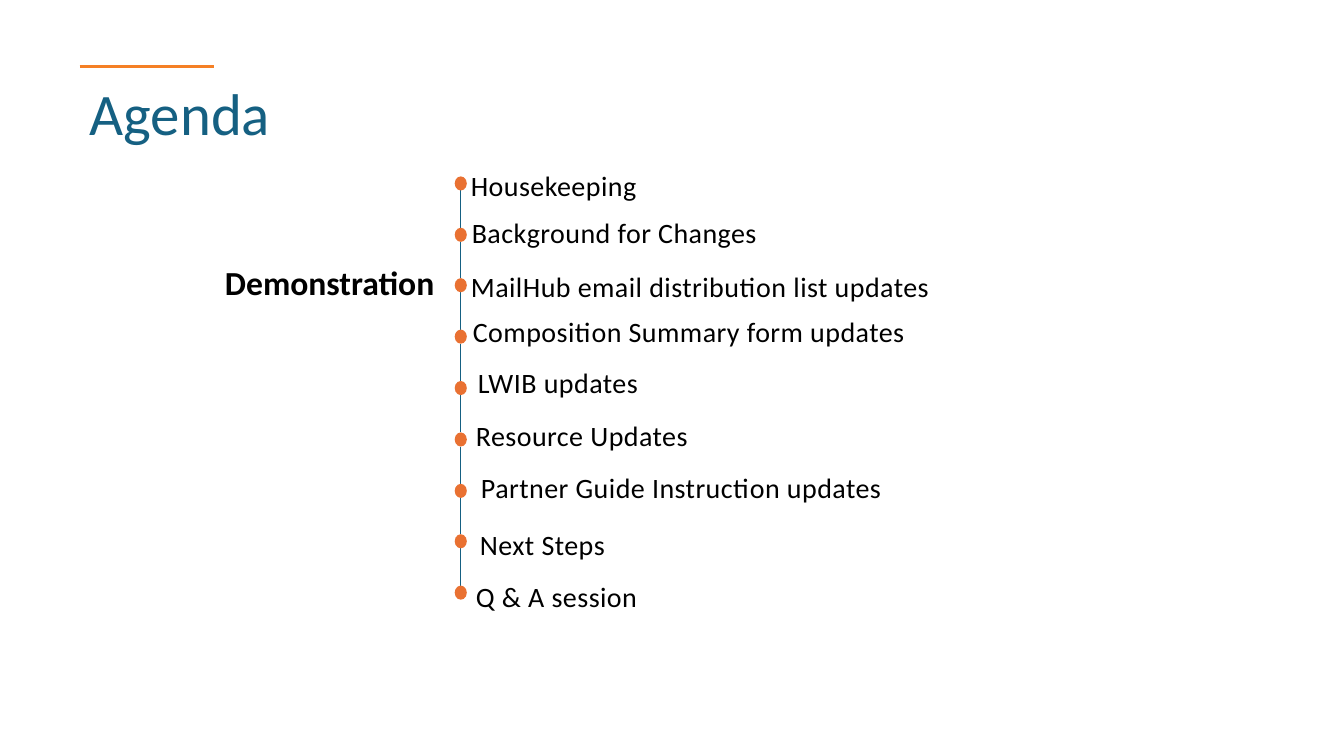
from dataclasses import dataclass

from lxml import etree
from pptx import Presentation
from pptx import util as u
from pptx.dml.color import RGBColor
from pptx.enum import shapes, text
from pptx.oxml.ns import qn

EMU_PER_PX = 9144  # 100 px to the inch


def px(length):
    return u.Emu(length * EMU_PER_PX)


@dataclass(frozen=True)
class Theme:
    font: str = "Calibri"
    ink: str = "000000"
    teal: str = "156082"
    dot: str = "E97132"
    accent: str = "F58025"
    title_size: int = 42
    label_size: int = 24
    item_size: int = 20
    item_spacing: int = 30  # hundredths of a point


class AgendaSlide:
    def __init__(self, deck, theme):
        self.theme = theme
        self.page = deck.slides.add_slide(deck.slide_layouts[5])

    def style(self, para, size, color, bold=False, align=text.PP_ALIGN.LEFT):
        para.alignment = align
        font = para.font
        font.name, font.size, font.bold = self.theme.font, u.Pt(size), bold
        font.color.rgb = RGBColor.from_string(color)

    def title(self, wording, left, top, width, height):
        box = self.page.shapes.title
        box.left, box.top, box.width, box.height = map(px, (left, top, width, height))
        frame = box.text_frame
        frame.text = wording
        frame.vertical_anchor = text.MSO_ANCHOR.TOP
        frame.auto_size = text.MSO_AUTO_SIZE.SHAPE_TO_FIT_TEXT
        self.style(frame.paragraphs[0], self.theme.title_size, self.theme.teal)

    def text(self, wording, left, top, width, height, size, spacing=0, **look):
        box = self.page.shapes.add_textbox(*map(px, (left, top, width, height)))
        frame = box.text_frame
        frame.word_wrap = True
        frame.auto_size = text.MSO_AUTO_SIZE.SHAPE_TO_FIT_TEXT
        frame.margin_left = frame.margin_right = 0
        frame.margin_top = frame.margin_bottom = 0
        para = frame.paragraphs[0]
        span = para.add_run()
        span.text = wording
        if spacing:
            span._r.get_or_add_rPr().set("spc", str(spacing))
        self.style(para, size, self.theme.ink, **look)

    def dot(self, left, top, width, height):
        oval = self.page.shapes.add_shape(
            shapes.MSO_SHAPE.OVAL, *map(px, (left, top, width, height)))
        oval.shadow.inherit = False
        oval.fill.solid()
        oval.fill.fore_color.rgb = RGBColor.from_string(self.theme.dot)
        oval.line.fill.background()

    def line(self, x1, y1, x2, y2, color, weight):
        rule = self.page.shapes.add_connector(
            shapes.MSO_CONNECTOR.STRAIGHT, *map(px, (x1, y1, x2, y2)))
        rule.line.color.rgb = RGBColor.from_string(color)
        rule.line.width = u.Pt(weight)
        etree.SubElement(rule._element.spPr, qn("a:effectLst"))


# Agenda entries: wording, left, top, width
ITEMS = [
    ("Housekeeping", 467, 167, 456),
    ("Background for Changes", 468, 214, 536),
    ("MailHub email distribution list updates", 467, 267, 639),
    ("Composition Summary form updates", 469, 312, 684),
    ("LWIB updates", 474, 363, 456),
    ("Resource Updates", 472, 415, 456),
    ("Partner Guide Instruction updates", 477, 467, 456),
    ("Next Steps", 476, 523, 456),
    ("Q & A session", 472, 575, 456),
]
ITEM_HEIGHT = 34

# Timeline of evenly spaced dots
AXIS_X = 457
DOT_WIDTH, DOT_HEIGHT = 12, 14
FIRST_DOT, DOT_STEP = 175, 50.75


def main():
    deck = Presentation()
    deck.slide_width, deck.slide_height = px(1333), px(750)
    theme = Theme()
    slide = AgendaSlide(deck, theme)

    # Heading with its accent rule
    slide.line(79, 66, 212, 66, theme.accent, 2.25)
    slide.title("Agenda", 79, 71, 667, 81)

    # Timeline: segments run from each dot to the next
    dot_tops = [round(FIRST_DOT + DOT_STEP * i) for i in range(len(ITEMS))]
    for upper, lower in zip(dot_tops, dot_tops[1:]):
        slide.line(AXIS_X, upper + DOT_HEIGHT, AXIS_X, lower, theme.teal, 0.75)
    for top in dot_tops:
        slide.dot(AXIS_X - DOT_WIDTH // 2, top, DOT_WIDTH, DOT_HEIGHT)

    # Entries and side label
    for wording, left, top, width in ITEMS:
        slide.text(wording, left, top, width, ITEM_HEIGHT,
                   theme.item_size, theme.item_spacing)
    slide.text("Demonstration", 212, 260, 230, 40, theme.label_size,
               bold=True, align=text.PP_ALIGN.CENTER)

    deck.save("out.pptx")


if __name__ == "__main__":
    main()
